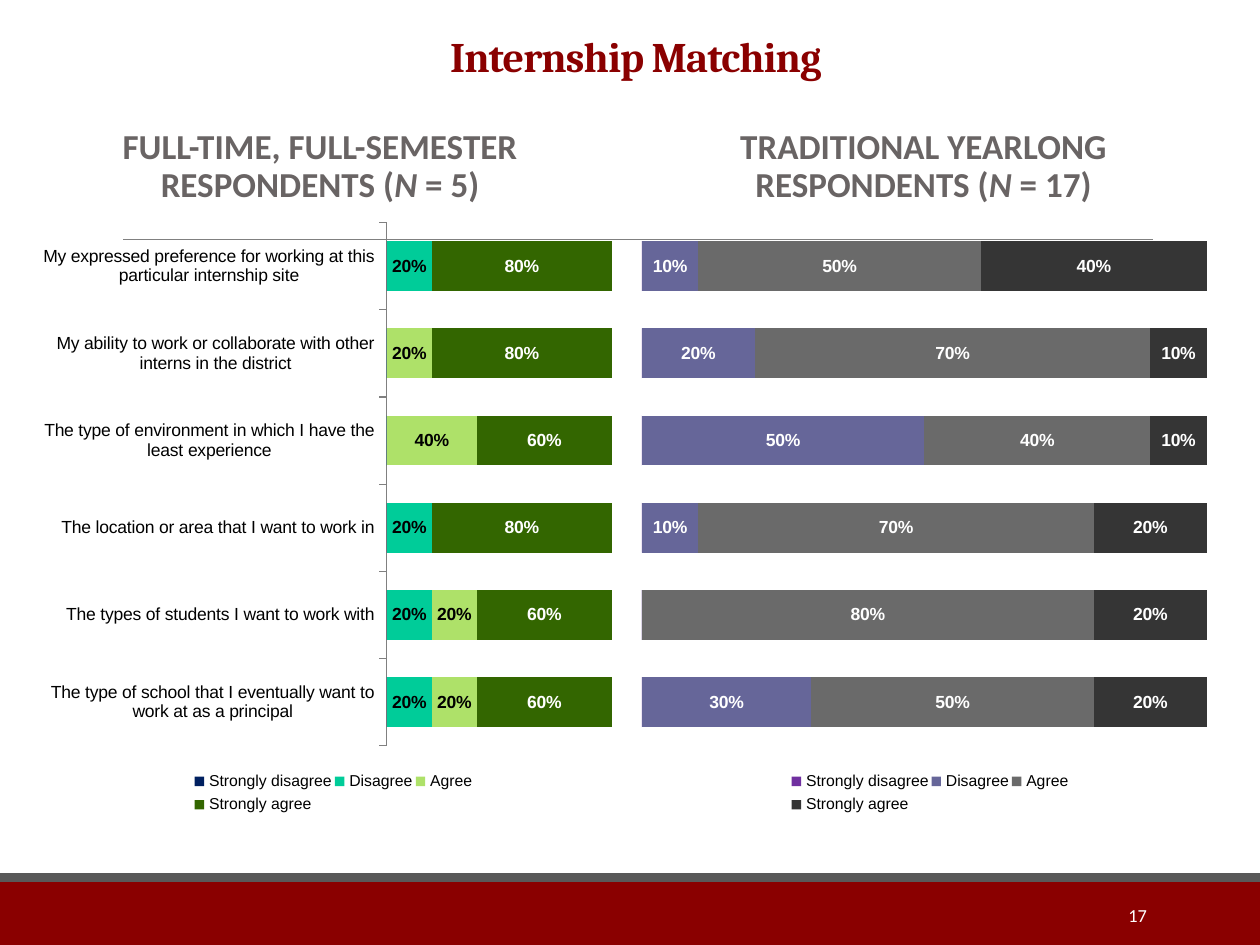
from dataclasses import dataclass
from typing import NamedTuple

from lxml import etree
from pptx import Presentation
from pptx.chart.data import CategoryChartData
from pptx.dml.color import RGBColor
from pptx.enum.chart import (XL_CHART_TYPE, XL_LABEL_POSITION,
                             XL_LEGEND_POSITION, XL_TICK_MARK)
from pptx.enum.shapes import MSO_CONNECTOR, MSO_SHAPE
from pptx.enum.text import MSO_ANCHOR, PP_ALIGN
from pptx.oxml.ns import qn
from pptx.util import Inches, Pt

STACK = XL_CHART_TYPE.BAR_STACKED_100
MID = XL_LABEL_POSITION.CENTER
BOTTOM = XL_LEGEND_POSITION.BOTTOM
OUT, NONE = XL_TICK_MARK.OUTSIDE, XL_TICK_MARK.NONE
RECT, LINE = MSO_SHAPE.RECTANGLE, MSO_CONNECTOR.STRAIGHT
LOW, CENTRE = MSO_ANCHOR.BOTTOM, MSO_ANCHOR.MIDDLE
AMID, RIGHT = PP_ALIGN.CENTER, PP_ALIGN.RIGHT

# The slide is a grid of 100 columns and 75 rows
COLS, ROWS = 100, 75
WIDE, HIGH = Inches(10), Inches(7.5)


@dataclass(frozen=True)
class Theme:
    red: str = "8A0000"
    band: str = "595959"
    rule: str = "808080"
    head: str = "696464"
    white: str = "FFFFFF"
    black: str = "000000"
    serif: str = "Cambria"
    sans: str = "Calibri"
    plain: str = "Arial"
    title: float = 24
    sub: float = 20
    page: float = 10.5
    label: float = 10
    key: float = 9


class Box(NamedTuple):
    col: float
    row: float
    cols: float
    rows: float


class Run(NamedTuple):
    text: str
    slant: bool = False


class Style(NamedTuple):
    face: str
    size: float
    tint: str
    bold: bool = True
    align: PP_ALIGN = AMID
    anchor: MSO_ANCHOR = CENTRE
    lead: float = 1
    before: float = 0
    after: float = 0
    track: int = 0


class Series(NamedTuple):
    name: str
    vals: tuple
    fill: str
    ink: str


class Panel(NamedTuple):
    box: Box
    plot: Box  # shares of the chart
    cats: tuple
    series: tuple
    axis: bool


T = Theme()
KEY = Box(0.27, 0.915, 0.48, 0.085)  # legend, shares of the chart


def rgb(code: str) -> RGBColor:
    return RGBColor.from_string(code)


def place(box: Box) -> tuple:
    return (int(WIDE * box.col / COLS), int(HIGH * box.row / ROWS),
            int(WIDE * box.cols / COLS), int(HIGH * box.rows / ROWS))


def band(slide, box: Box, fill: str) -> None:
    shape = slide.shapes.add_shape(RECT, *place(box))
    shape.shadow.inherit = False
    shape.fill.solid()
    shape.fill.fore_color.rgb = rgb(fill)
    shape.line.fill.background()


def rule(slide, box: Box) -> None:
    x, y, w, h = place(box)
    line = slide.shapes.add_connector(LINE, x, y, x + w, y + h)
    line.line.color.rgb = rgb(T.rule)
    line.line.width = Pt(0.5)
    etree.SubElement(line.element.spPr, qn("a:effectLst"))


def write(slide, box: Box, runs: tuple, style: Style) -> None:
    frame = slide.shapes.add_textbox(*place(box)).text_frame
    frame.word_wrap = True
    frame.vertical_anchor = style.anchor
    para = frame.paragraphs[0]
    para.alignment, para.line_spacing = style.align, style.lead
    para.space_before, para.space_after = Pt(style.before), Pt(style.after)
    for part in runs:
        run = para.add_run()
        run.text = part.text
        font = run.font
        font.name, font.size = style.face, Pt(style.size)
        font.bold, font.italic = style.bold, part.slant
        font.color.rgb = rgb(style.tint)
        if style.track:
            run.font._element.set("spc", str(style.track))


def layout(box: Box, inner: bool):
    """Make a manual layout for a plot or a legend."""
    root = etree.Element(qn("c:layout"))
    man = etree.SubElement(root, qn("c:manualLayout"))
    pairs = [("layoutTarget", "inner")] if inner else []
    pairs += [("xMode", "edge"), ("yMode", "edge")]
    pairs += zip("xywh", box)
    for tag, val in pairs:
        etree.SubElement(man, qn("c:" + tag)).set("val", str(val))
    return root


def draw(slide, panel: Panel) -> None:
    data = CategoryChartData(number_format="0%")
    data.categories = panel.cats
    for item in panel.series:
        data.add_series(item.name, item.vals)
    chart = slide.shapes.add_chart(STACK, *place(panel.box), data).chart
    chart.has_title = False
    chart.font.name, chart.font.size = T.plain, Pt(T.key)
    chart.font.color.rgb = rgb(T.black)

    # Axes
    cat, val = chart.category_axis, chart.value_axis
    val.visible = val.has_major_gridlines = False
    val.minimum_scale, val.maximum_scale = 0, 1
    cat.visible = panel.axis
    cat.major_tick_mark, cat.minor_tick_mark = OUT, NONE
    cat.tick_labels.font.size = Pt(T.label)
    cat.format.line.color.rgb = rgb(T.rule)

    # Bars and their labels; zeros stay blank
    plot = chart.plots[0]
    plot.gap_width, plot.overlap, plot.vary_by_categories = 75, 100, False
    for bar, item in zip(plot.series, panel.series):
        bar.format.fill.solid()
        bar.format.fill.fore_color.rgb = rgb(item.fill)
        if any(item.vals):
            tag = bar.data_labels
            tag.show_value, tag.position = True, MID
            tag.number_format, tag.number_format_is_linked = "0%;;", False
            tag.font.size, tag.font.bold = Pt(T.label), True
            tag.font.color.rgb = rgb(item.ink)

    # Legend, fixed layout and clear ground
    chart.has_legend = True
    chart.legend.position, chart.legend.include_in_layout = BOTTOM, False
    root = chart.element
    area, key = root.find(".//" + qn("c:plotArea")), root.find(".//" + qn("c:legend"))
    for part in (area, key):
        for old in part.findall(qn("c:layout")):
            part.remove(old)
    area.insert(0, layout(panel.plot, True))
    key.find(qn("c:legendPos")).addnext(layout(KEY, False))
    ground = etree.Element(qn("c:spPr"))
    etree.SubElement(ground, qn("a:noFill"))
    edge = etree.SubElement(ground, qn("a:ln"))
    etree.SubElement(edge, qn("a:noFill"))
    root.find(qn("c:chart")).addnext(ground)


NAMES = ("Strongly disagree", "Disagree", "Agree", "Strongly agree")


def rank(vals: tuple, fills: tuple, inks: tuple) -> tuple:
    return tuple(map(Series, NAMES, vals, fills, inks))


FULL = Panel(
    Box(2.5, 16.7, 47, 48.3), Box(0.6, 0.02, 0.38, 0.86),
    ("The type of school that I eventually want to work at as a principal",
     "The types of students I want to work with",
     "The location or area that I want to work in",
     "The type of environment in which I have the least experience",
     "My ability to work or collaborate with other interns in the district",
     "My expressed preference for working at this particular internship site"),
    rank(((0,) * 6, (0.2, 0.2, 0.2, 0, 0, 0.2), (0.2, 0.2, 0, 0.4, 0.2, 0),
          (0.6, 0.6, 0.8, 0.6, 0.8, 0.8)),
         ("002060", "00CC99", "AEE169", "336600"), (T.black,) * 3 + (T.white,)),
    True)
YEAR = Panel(
    Box(50, 16.7, 46.7, 48.3), Box(0.02, 0.02, 0.96, 0.86), tuple("123456"),
    rank(((0,) * 6, (0.3, 0, 0.1, 0.5, 0.2, 0.1), (0.5, 0.8, 0.7, 0.4, 0.7, 0.5),
          (0.2, 0.2, 0.2, 0.1, 0.1, 0.4)),
         ("7030A0", "666699", "6A6A6A", "353535"), (T.white,) * 4),
    False)
TITLE = Style(T.serif, T.title, T.red, anchor=LOW, lead=0.85, track=-50)
HEAD = Style(T.sans, T.sub, T.head, lead=0.9, before=12, after=2)
PAGE = Style(T.sans, T.page, T.white, bold=False, align=RIGHT)


def main() -> None:
    deck = Presentation()
    deck.slide_width, deck.slide_height = WIDE, HIGH
    slide = deck.slides.add_slide(deck.slide_layouts[6])
    # Footer and rule
    band(slide, Box(0, 70, COLS, 5), T.red)
    band(slide, Box(0, 69.3, COLS, 0.7), T.band)
    rule(slide, Box(9.8, 19, 81.7, 0))
    # Title and headings
    write(slide, Box(9.2, 1.7, 82.5, 5.2), (Run("Internship Matching"),), TITLE)
    for box, lead, count in (
            (Box(0.8, 9.2, 49.2, 8.1), "FULL-TIME, FULL-SEMESTER", 5),
            (Box(50.8, 9.2, 45, 8.1), "TRADITIONAL YEARLONG", 17)):
        write(slide, box, (Run(f"{lead} RESPONDENTS ("), Run("N", True),
                           Run(f" = {count})")), HEAD)
    # Charts and page number
    for panel in (FULL, YEAR):
        draw(slide, panel)
    write(slide, Box(81.2, 70.6, 10.8, 4), (Run("17"),), PAGE)
    deck.save("out.pptx")


if __name__ == "__main__":
    main()
